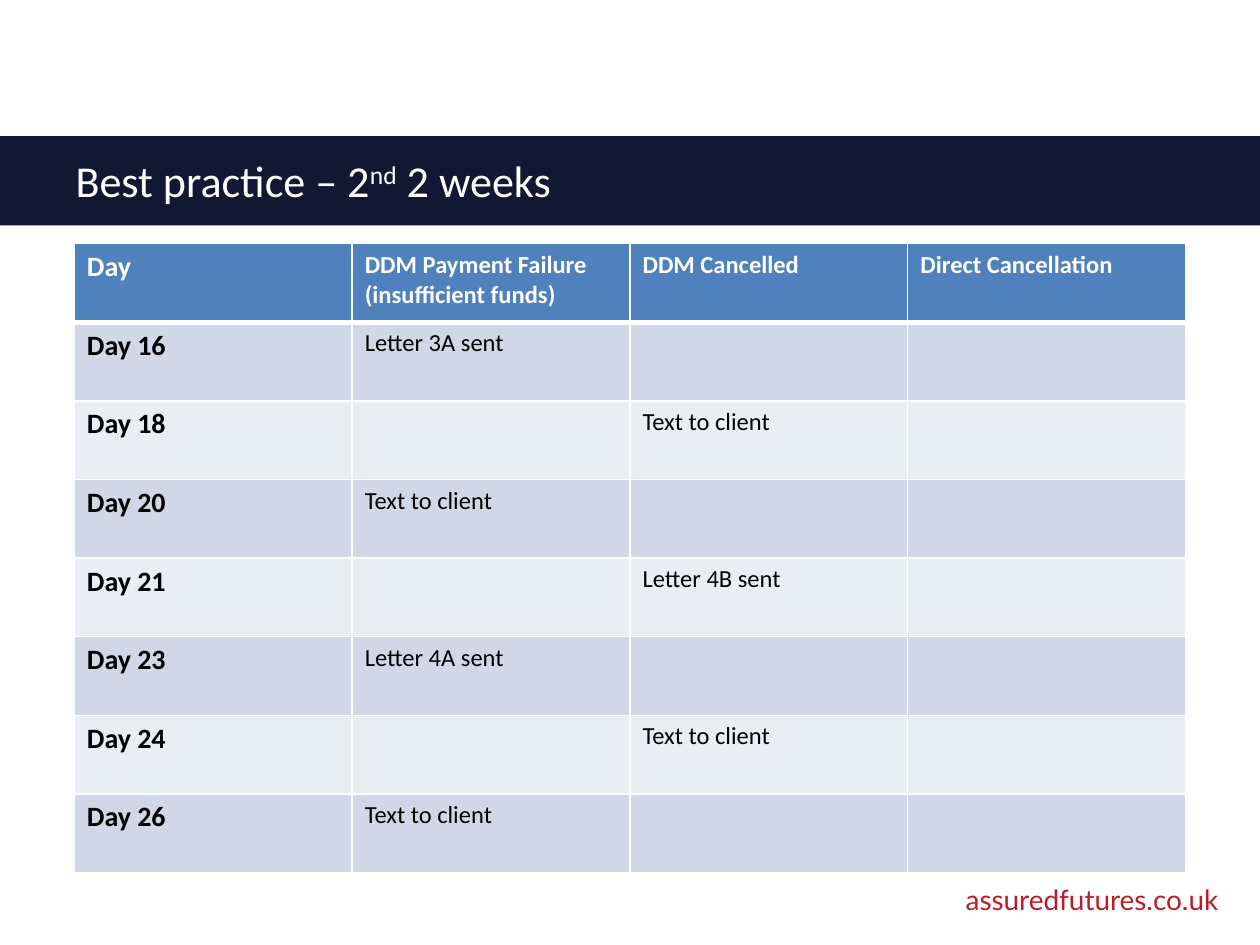
from lxml.etree import SubElement
from pptx import Presentation
from pptx.dml.color import RGBColor
from pptx.enum.shapes import MSO_SHAPE as Shape
from pptx.enum.text import MSO_ANCHOR as Anchor, MSO_AUTO_SIZE as AutoSize, PP_ALIGN as Align
from pptx.oxml.ns import qn
from pptx.util import Pt

WHITE, BLACK, NAVY, RED = "FFFFFF", "000000", "101833", "B71F28"
HEADER_FILL = "4F81BD"
BAND_FILLS = ("D0D8E8", "E9EDF4")
COLUMN_WIDTH, ROW_HEIGHT = 158.75, 44.93
ROWS = [
    ("Day", "DDM Payment Failure (insufficient funds)", "DDM Cancelled", "Direct Cancellation"),
    ("Day 16", "Letter 3A sent", "", ""),
    ("Day 18", "", "Text to client", ""),
    ("Day 20", "Text to client", "", ""),
    ("Day 21", "", "Letter 4B sent", ""),
    ("Day 23", "Letter 4A sent", "", ""),
    ("Day 24", "", "Text to client", ""),
    ("Day 26", "Text to client", "", ""),
]


def set_color(color_format, value):
    color_format.rgb = RGBColor.from_string(value)


def fill_solid(fill, value):
    fill.solid()
    set_color(fill.fore_color, value)


def place(shape, left, top, width, height):
    shape.left, shape.top, shape.width, shape.height = map(Pt, (left, top, width, height))


def add_run(paragraph, text, size, color, bold=False, font="Calibri"):
    run = paragraph.add_run()
    run.text = text
    run.font.name, run.font.size, run.font.bold = font, Pt(size), bold
    set_color(run.font.color, color)
    return run


def add_title(slide):
    title = slide.shapes.title
    place(title, 36, 85, 648, 36)
    frame = title.text_frame
    frame.auto_size = AutoSize.NONE
    frame.vertical_anchor = Anchor.MIDDLE
    paragraph = frame.paragraphs[0]
    paragraph.alignment = Align.LEFT
    for text, baseline in (("Best practice – 2", 0), ("nd", 30000), (" 2 weeks", 0)):
        run = add_run(paragraph, text, 25.2, WHITE)
        if baseline:
            run._r.get_or_add_rPr().set("baseline", str(baseline))


def add_title_band(slide):
    band = slide.shapes.add_shape(Shape.RECTANGLE, 0, Pt(77.76), Pt(720), Pt(51.1))
    band.shadow.inherit = False
    fill_solid(band.fill, NAVY)
    band.line.fill.background()
    slide.shapes.title.element.addprevious(band.element)


def add_website(slide):
    box = slide.shapes.add_textbox(Pt(516.2), Pt(501), Pt(187.2), Pt(28))
    frame = box.text_frame
    frame.word_wrap = True
    frame.vertical_anchor = Anchor.MIDDLE
    paragraph = frame.paragraphs[0]
    paragraph.alignment = Align.RIGHT
    paragraph.line_spacing = 0.9
    add_run(paragraph, "assuredfutures.co.uk", 16, RED, font="Lato")


def set_borders(cell, bottom):
    properties = cell._tc.get_or_add_tcPr()
    fill = properties[0]
    for side, width in (("L", 1), ("R", 1), ("T", 1), ("B", bottom)):
        line = SubElement(properties, qn(f"a:ln{side}"), w=str(Pt(width)))
        SubElement(SubElement(line, qn("a:solidFill")), qn("a:srgbClr"), val=WHITE)
    properties.append(fill)


def format_cell(cell, text, row, column):
    header = row == 0
    fill_solid(cell.fill, HEADER_FILL if header else BAND_FILLS[(row - 1) % 2])
    set_borders(cell, 3 if header else 1)
    if text:
        add_run(cell.text_frame.paragraphs[0], text, 14 if column else 16,
                WHITE if header else BLACK, bold=header or column == 0)


def add_schedule(slide):
    row_count, column_count = len(ROWS), len(ROWS[0])
    table = slide.shapes.add_table(row_count, column_count, Pt(42.5), Pt(139.2),
                                   Pt(COLUMN_WIDTH * column_count),
                                   Pt(ROW_HEIGHT * row_count)).table
    for column in table.columns:
        column.width = Pt(COLUMN_WIDTH)
    for row_index, texts in enumerate(ROWS):
        table.rows[row_index].height = Pt(ROW_HEIGHT)
        for column_index, text in enumerate(texts):
            format_cell(table.cell(row_index, column_index), text, row_index, column_index)


def main():
    presentation = Presentation()
    presentation.slide_width, presentation.slide_height = Pt(720), Pt(540)
    slide = presentation.slides.add_slide(presentation.slide_layouts[5])
    add_title(slide)
    add_title_band(slide)
    add_website(slide)
    add_schedule(slide)
    presentation.save("out.pptx")


if __name__ == "__main__":
    main()
